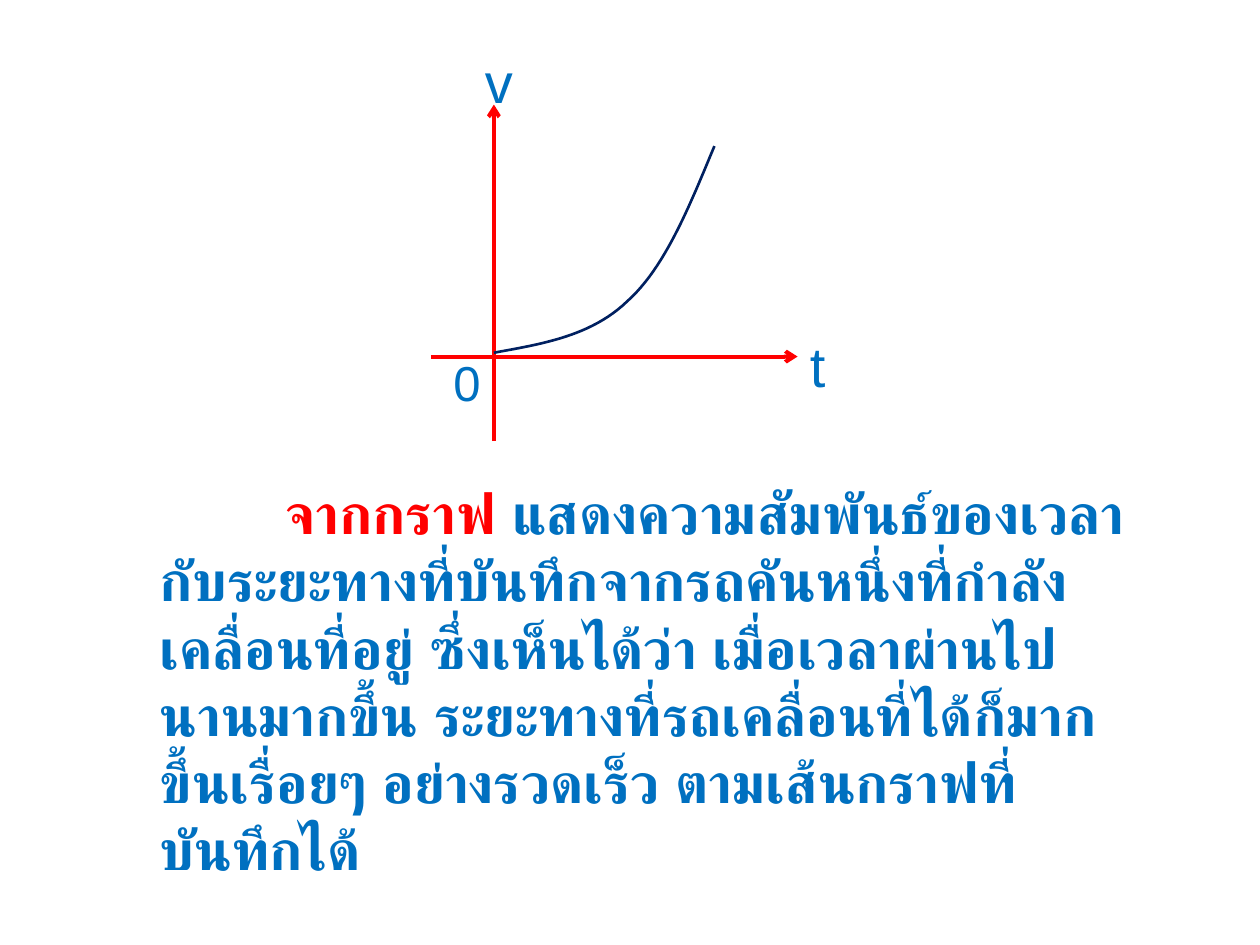
from dataclasses import dataclass

from lxml import etree
from pptx import Presentation
from pptx import util as u
from pptx.dml.color import RGBColor
from pptx.enum import lang, shapes, text
from pptx.oxml.ns import qn


@dataclass(frozen=True)
class Theme:
    """Colours, fonts and type sizes of the slide."""
    blue: str = "0070C0"
    red: str = "FF0000"
    navy: str = "002060"
    mark: str = "Arial"
    body: str = "Calibri"
    big: int = 32
    small: int = 28


THEME = Theme()
LEAD = "จากกราฟ "
STORY = (
    "แสดงความสัมพันธ์ของเวลากับระยะทางที่บันทึกจากรถคันหนึ่งที่กำลังเคลื่อนที่อยู่ "
    "ซึ่งเห็นได้ว่า เมื่อเวลาผ่านไปนานมากขึ้น "
    "ระยะทางที่รถเคลื่อนที่ได้ก็มากขึ้นเรื่อยๆ "
    "อย่างรวดเร็ว ตามเส้นกราฟที่บันทึกได้"
)
CURVE = [
    ((3.92, 2.8), (4.3, 2.73), (4.69, 2.67), (4.98, 2.39)),
    ((4.98, 2.39), (5.28, 2.12), (5.47, 1.64), (5.67, 1.16)),
]


def style(run, face, size, color, bold=False):
    """Format one run."""
    font = run.font
    font.name, font.size, font.bold = face, u.Pt(size), bold
    font.color.rgb = RGBColor.from_string(color)


def add_box(slide, left, top, width, height):
    """Add a wrapping text box and return its frame."""
    box = slide.shapes.add_textbox(*map(u.Inches, (left, top, width, height)))
    frame = box.text_frame
    frame.word_wrap = True
    frame.auto_size = text.MSO_AUTO_SIZE.SHAPE_TO_FIT_TEXT
    return frame


def add_mark(slide, word, left, top, height, size):
    """Add a one-letter label to the graph."""
    frame = add_box(slide, left, top, 0.67, height)
    frame.text = word
    style(frame.paragraphs[0].runs[0], THEME.mark, size, THEME.blue)


def add_axis(slide, start, end):
    """Add an axis with an arrowhead at its end."""
    axis = slide.shapes.add_connector(
        shapes.MSO_CONNECTOR.STRAIGHT, *map(u.Inches, start + end))
    axis.line.color.rgb = RGBColor.from_string(THEME.red)
    axis.line.width = u.Pt(2.25)
    etree.SubElement(axis.line._get_or_add_ln(), qn("a:tailEnd"), type="arrow")
    etree.SubElement(axis._element.spPr, qn("a:effectLst"))


def trace(curve, steps=24):
    """Return the points along one cubic curve after its start."""
    points = []
    for step in range(1, steps + 1):
        t = step / steps
        parts = ((1 - t) ** 3, 3 * t * (1 - t) ** 2, 3 * t * t * (1 - t), t ** 3)
        points.append(tuple(
            u.Inches(sum(p * c for p, c in zip(parts, axis)))
            for axis in zip(*curve)))
    return points


def add_curve(slide, curves):
    """Add an open line through the joined cubic curves."""
    build = slide.shapes.build_freeform(*map(u.Inches, curves[0][0]))
    points = [point for curve in curves for point in trace(curve)]
    build.add_line_segments(points, close=False)
    line = build.convert_to_shape()
    line.shadow.inherit = False
    line.fill.background()
    line.line.color.rgb = RGBColor.from_string(THEME.navy)
    line.line.width = u.Pt(1.5)


def add_story(slide):
    """Add the indented paragraph that explains the graph."""
    para = add_box(slide, 1.17, 3.75, 8.08, 2.26).paragraphs[0]
    para._p.get_or_add_pPr().set("indent", str(u.Inches(1)))
    for words, color in ((LEAD, THEME.red), (STORY, THEME.blue)):
        run = para.add_run()
        run.text = words
        style(run, THEME.body, THEME.big, color, bold=True)
        run.font.language_id = lang.MSO_LANGUAGE_ID.THAI


def main():
    """Build and save the slide."""
    deck = Presentation()
    deck.slide_width, deck.slide_height = u.Inches(10), u.Inches(7.5)
    slide = deck.slides.add_slide(deck.slide_layouts[6])
    add_axis(slide, (3.92, 3.5), (3.92, 0.83))
    add_axis(slide, (3.42, 2.83), (6.33, 2.83))
    add_mark(slide, "v", 3.75, 0.33, 0.64, THEME.big)
    add_mark(slide, "t", 6.33, 2.58, 0.64, THEME.big)
    add_mark(slide, "0", 3.5, 2.75, 0.57, THEME.small)
    add_story(slide)
    add_curve(slide, CURVE)
    deck.save("out.pptx")


if __name__ == "__main__":
    main()
